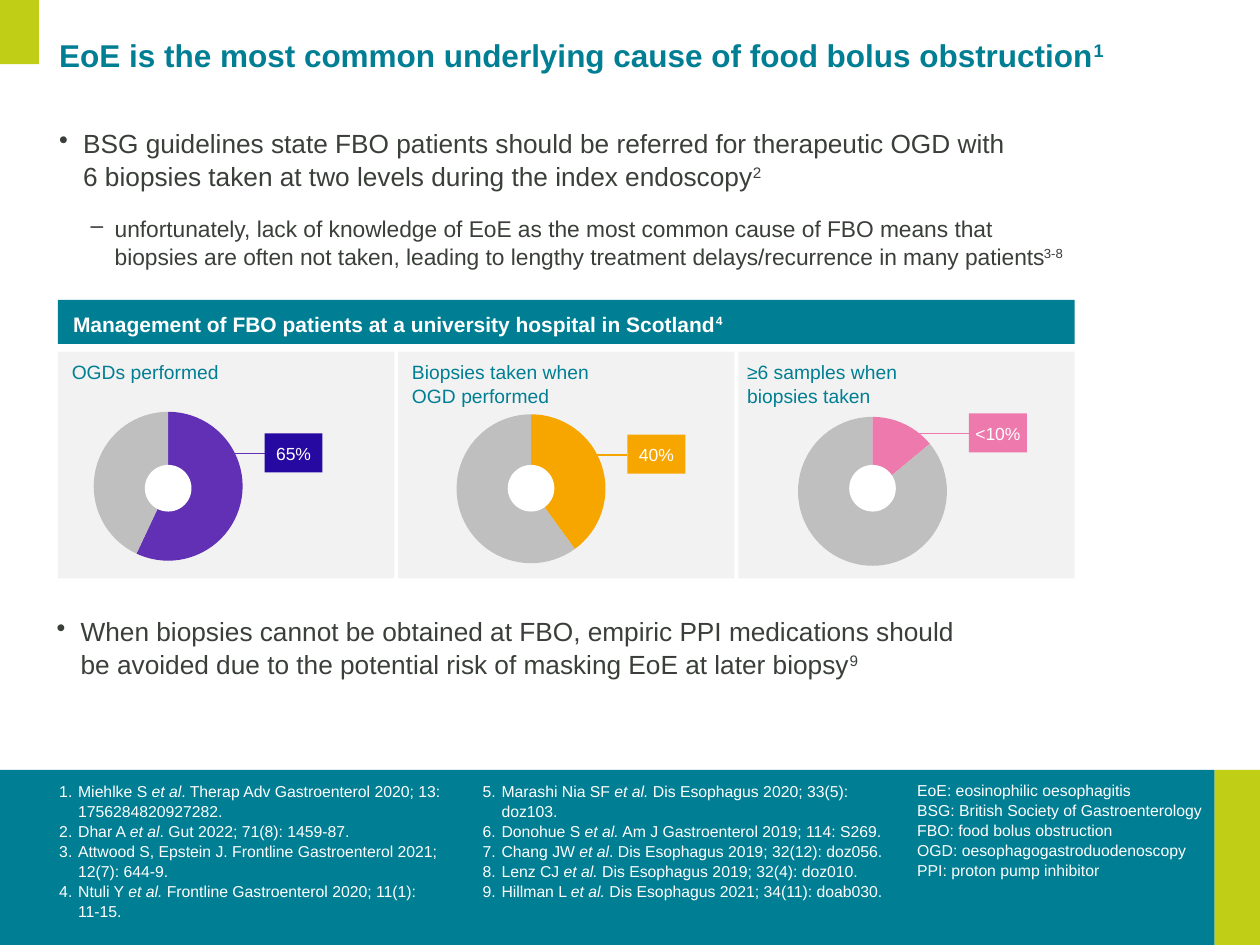
from lxml import etree
from pptx import Presentation
from pptx.chart.data import CategoryChartData
from pptx.dml.color import RGBColor
from pptx.enum.chart import XL_CHART_TYPE
from pptx.enum.shapes import MSO_CONNECTOR, MSO_SHAPE
from pptx.enum.text import MSO_ANCHOR, MSO_AUTO_SIZE, PP_ALIGN
from pptx.oxml import parse_xml
from pptx.oxml.ns import nsdecls, qn
from pptx.util import Inches, Pt

PIE = XL_CHART_TYPE.PIE
STRAIGHT = MSO_CONNECTOR.STRAIGHT
RECT, OVAL = MSO_SHAPE.RECTANGLE, MSO_SHAPE.OVAL
TOP, MIDDLE = MSO_ANCHOR.TOP, MSO_ANCHOR.MIDDLE
LEFT, CENTER = PP_ALIGN.LEFT, PP_ALIGN.CENTER
NO_FIT = MSO_AUTO_SIZE.NONE

COLORS = {
    "teal": "007E93", "lime": "C0CF15", "panel": "F2F2F2", "white": "FFFFFF",
    "text": "3A3F3A", "rest": "BFBFBF", "purple": "6130B4", "indigo": "2609A0",
    "orange": "F7A600", "pink": "EE79AD",
}
COLS, ROWS = 100, 75
PANEL_LEFT, PANEL_STEP, PANEL_TOP = 4.6, 27, 27.9
PANELS = [
    {"label": "OGDs performed", "label_x": 5.7, "chart": (2.4, 31.3), "value": 57,
     "color": "purple", "tag": "65%", "tag_color": "indigo", "tag_y": 34.4, "line_x": 14},
    {"label": "Biopsies taken when\vOGD performed", "label_x": 32.7, "chart": (31.2, 31.5),
     "value": 40, "color": "orange", "tag": "40%", "tag_color": "orange", "tag_y": 34.5,
     "line_x": 14},
    {"label": "≥6 samples when\vbiopsies taken", "label_x": 59.3, "chart": (58.3, 31.7),
     "value": 14, "color": "pink", "tag": "<10%", "tag_color": "pink", "tag_y": 32.8,
     "line_x": 12.9},
]
REFERENCES = [
    "Miehlke S |et al|. Therap Adv Gastroenterol 2020; 13: 1756284820927282.",
    "Dhar A |et al|. Gut 2022; 71(8): 1459-87.",
    "Attwood S, Epstein J. Frontline Gastroenterol 2021; 12(7): 644-9.",
    "Ntuli Y |et al.| Frontline Gastroenterol 2020; 11(1):\v11-15.",
    "Marashi Nia SF |et al.| Dis Esophagus 2020; 33(5): doz103.",
    "Donohue S |et al.| Am J Gastroenterol 2019; 114: S269.",
    "Chang JW |et al|. Dis Esophagus 2019; 32(12): doz056.",
    "Lenz CJ |et al.| Dis Esophagus 2019; 32(4): doz010.",
    "Hillman L |et al.| Dis Esophagus 2021; 34(11): doab030.",
]
ABBREVIATIONS = [
    "EoE: eosinophilic oesophagitis",
    "BSG: British Society of Gastroenterology",
    "FBO: food bolus obstruction",
    "OGD: oesophagogastroduodenoscopy",
    "PPI: proton pump inhibitor",
]


class Deck:
    """Builds one slide on a grid of COLS by ROWS with a shared text style."""

    def __init__(self):
        self.prs = Presentation()
        self.prs.slide_width, self.prs.slide_height = Inches(10), Inches(7.5)
        self.s = self.prs.slides.add_slide(self.prs.slide_layouts[5])

    def color(self, name):
        return RGBColor.from_string(COLORS[name])

    def place(self, x, y, w, h):
        dx, dy = self.prs.slide_width / COLS, self.prs.slide_height / ROWS
        return [round(v) for v in (x * dx, y * dy, w * dx, h * dy)]

    def frame(self, tf, insets=(0, 0, 0, 0), anchor=TOP):
        tf.word_wrap, tf.auto_size, tf.vertical_anchor = True, NO_FIT, anchor
        (tf.margin_left, tf.margin_top,
         tf.margin_right, tf.margin_bottom) = [Inches(v) for v in insets]

    def paragraph(self, p, text, size, color, bold=False, align=LEFT, mark="super"):
        p.alignment, p.line_spacing = align, 1.05
        for i, part in enumerate(text.split("|")):
            for j, line in enumerate(part.split("\v")):
                if j:
                    p.add_line_break()
                r = p.add_run()
                r.text = line
                r.font.name, r.font.size, r.font.bold = "Arial", Pt(size), bold
                r.font.color.rgb = self.color(color)
                if i % 2 and mark == "super":
                    r.font._element.set("baseline", "30000")
                elif i % 2:
                    r.font.italic = True

    def bullet(self, p, tag, indent, hang, **attrs):
        pPr = p._p.get_or_add_pPr()
        pPr.set("marL", str(Inches(indent)))
        pPr.set("indent", str(-Inches(hang)))
        etree.SubElement(pPr, qn(tag), **attrs)

    def title(self, box, text):
        sp = self.s.shapes.title
        sp.left, sp.top, sp.width, sp.height = self.place(*box)
        self.frame(sp.text_frame)
        self.paragraph(sp.text_frame.paragraphs[0], text, 18, "teal", bold=True)

    def shape(self, box, fill, kind=RECT):
        sp = self.s.shapes.add_shape(kind, *self.place(*box))
        sp.shadow.inherit = False
        sp.fill.solid()
        sp.fill.fore_color.rgb = self.color(fill)
        sp.line.fill.background()
        return sp

    def label(self, box, fill, text, size, insets, anchor=TOP, **style):
        tf = self.shape(box, fill).text_frame
        self.frame(tf, insets, anchor)
        self.paragraph(tf.paragraphs[0], text, size, "white", **style)

    def text(self, box, lines, size, color, insets=(0, 0, 0, 0), **style):
        tf = self.s.shapes.add_textbox(*self.place(*box)).text_frame
        self.frame(tf, insets)
        for i, line in enumerate(lines):
            p = tf.add_paragraph() if i else tf.paragraphs[0]
            self.paragraph(p, line, size, color, **style)
        return tf

    def points(self, box, items):
        tf = self.text(box, [], 15, "text")
        for i, (text, size, char, indent) in enumerate(items):
            p = tf.add_paragraph() if i else tf.paragraphs[0]
            self.paragraph(p, text, size, "text")
            if i:
                p.space_before = Pt(12)
            self.bullet(p, "a:buChar", indent, 0.19, char=char)

    def references(self, box, lines):
        tf = self.text(box, lines, 9, "white", (0, 0.08, 0.12, 0), mark="italic")
        for p in tf.paragraphs:
            self.bullet(p, "a:buAutoNum", 0.15, 0.15, type="arabicPeriod")
        bodyPr = tf._txBody.bodyPr
        bodyPr.set("numCol", "2")
        bodyPr.set("spcCol", str(Inches(0.12)))

    def pie(self, box, value, color):
        data = CategoryChartData()
        data.categories = ["1", "2"]
        data.add_series("Series 1", (value, 100 - value))
        chart = self.s.shapes.add_chart(PIE, *self.place(*box), data).chart
        chart.has_title = chart.has_legend = False
        chart.font.name, chart.font.size = "Calibri", Pt(10)
        chart.font.color.rgb = self.color("teal")
        plot = chart.plots[0]
        plot.vary_by_categories = False
        for i, name in enumerate((color, "rest")):
            fmt = plot.series[0].points[i].format
            fmt.fill.solid()
            fmt.fill.fore_color.rgb = self.color(name)
            fmt.line.fill.background()
        area = chart._chartSpace.find(".//" + qn("c:plotArea"))
        for old in area.findall(qn("c:layout")):
            area.remove(old)
        sizes = {"x": 0.23, "y": 0.09, "w": 0.54, "h": 0.82}
        parts = "".join(f'<c:{k} val="{v}"/>' for k, v in sizes.items())
        area.insert(0, parse_xml(
            f'<c:layout {nsdecls("c")}><c:manualLayout><c:layoutTarget val="inner"/>'
            f'<c:xMode val="edge"/><c:yMode val="edge"/>{parts}</c:manualLayout></c:layout>'))

    def line(self, x1, x2, y, color):
        c = self.s.shapes.add_connector(STRAIGHT, *self.place(x1, y, x2, y))
        c.line.color.rgb, c.line.width = self.color(color), Pt(1)
        etree.SubElement(c._element.spPr, qn("a:effectLst"))

    def panel(self, i, label, label_x, chart, value, color, tag, tag_color, tag_y, line_x):
        x, y = chart
        self.shape((PANEL_LEFT + i * PANEL_STEP, PANEL_TOP, 26.7, 18), "panel")
        self.text((label_x, 28.5, 20, 5.9), [label], 11, "teal")
        self.pie((x, y, 21.9, 14.6), value, color)
        self.shape((x + 9.1, 36.9, 3.7, 3.7), "white", OVAL)
        self.line(x + line_x, x + 18.6, tag_y + 1.6, color)
        self.label((x + 18.6, tag_y, 4.6, 3.1), tag_color, tag, 10, (0.04,) * 4,
                   MIDDLE, align=CENTER)


def main():
    d = Deck()
    d.shape((0, 61.1, 96.4, 13.9), "teal")
    d.shape((96.4, 61.1, 3.6, 13.9), "lime")
    d.shape((0, 0, 3.1, 5.1), "lime")
    d.title((4.7, 2.7, 89.8, 5.4),
            "EoE is the most common underlying cause of food bolus obstruction|1")
    d.points((4.7, 10, 83.6, 11.8), [
        ("BSG guidelines state FBO patients should be referred for therapeutic OGD with\v"
         "6 biopsies taken at two levels during the index endoscopy|2", 15, "•", 0.19),
        ("unfortunately, lack of knowledge of EoE as the most common cause of FBO means that\v"
         "biopsies are often not taken, leading to lengthy treatment delays/recurrence in many "
         "patients|3-8", 13, "–", 0.44)])
    d.label((4.6, 23.8, 80.7, 3.5), "teal",
            "Management of FBO patients at a university hospital in Scotland|4",
            12, (0.12, 0.08, 0, 0.04), bold=True)
    for i, panel in enumerate(PANELS):
        d.panel(i, **panel)
    d.points((4.5, 48.7, 75.6, 8.1), [
        ("When biopsies cannot be obtained at FBO, empiric PPI medications should\v"
         "be avoided due to the potential risk of masking EoE at later biopsy|9",
         15, "•", 0.19)])
    d.references((4.7, 61.2, 67.2, 11.4), REFERENCES)
    d.text((72.8, 61.1, 24.7, 12.4), ABBREVIATIONS, 9, "white", (0, 0.08, 0.12, 0))
    d.prs.save("out.pptx")


if __name__ == "__main__":
    main()
